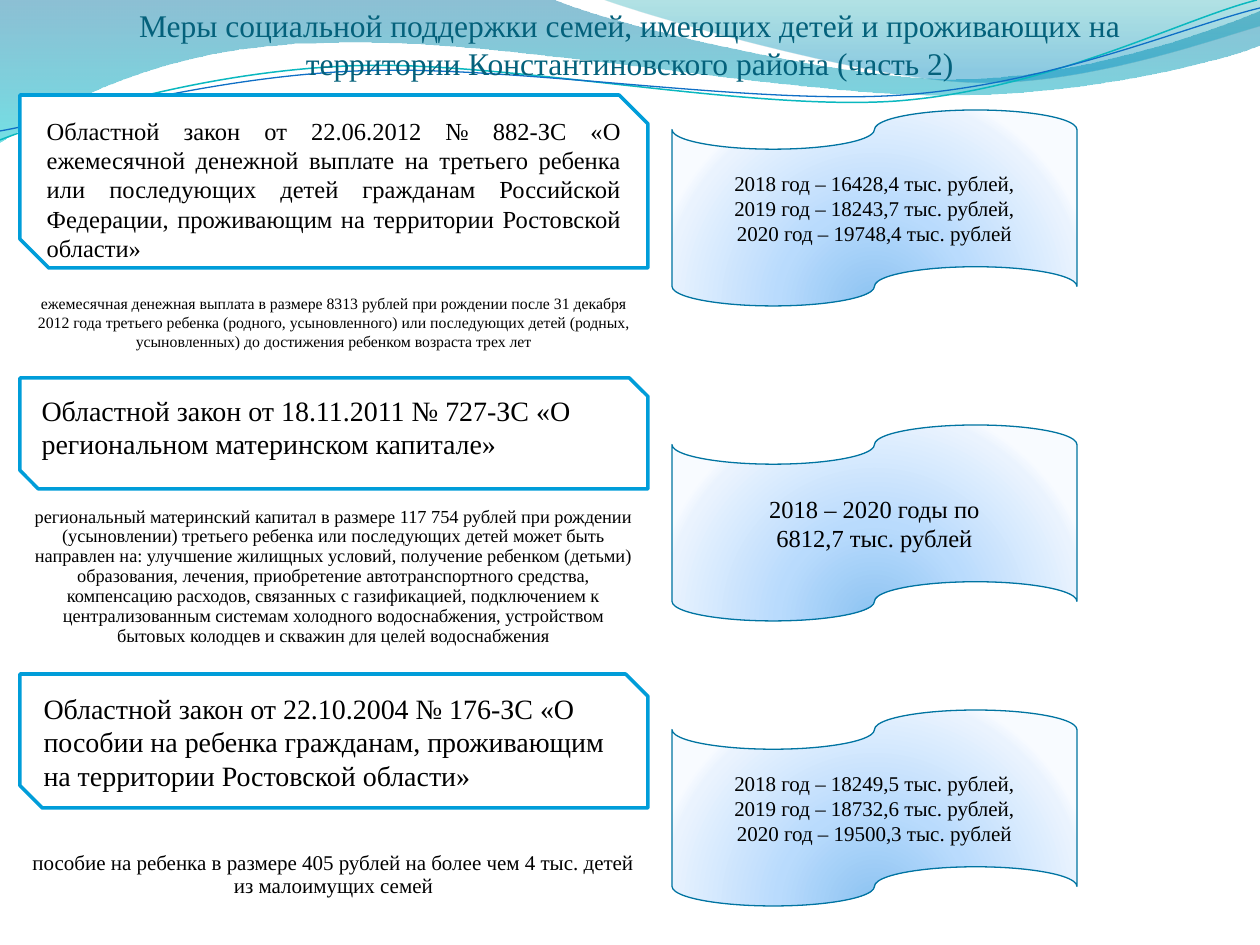
from pptx import Presentation
from pptx.dml.color import RGBColor
from pptx.enum.shapes import MSO_SHAPE
from pptx.enum.text import MSO_ANCHOR, PP_ALIGN
from pptx.oxml import parse_xml
from pptx.oxml.ns import nsdecls, qn
from pptx.util import Pt

PX = 914400 / 126  # EMU in one px
COLORS = {
    "title": "04617B", "text": "000000", "white": "FFFFFF",
    "law_line": "009DD9", "tape_line": "0074A1",
    "teal_wave": "0AB8BF", "blue_wave": "0F6FC6",
}
LINEAR = '<a:lin ang="5400000" scaled="1"/>'
RADIAL = ('<a:path path="circle"><a:fillToRect l="50000" t="130000" '
          'r="50000" b="-30000"/></a:path>')
TAPE_STOPS = [(0, "8BC2F1", 100), (43, "B9DBFD", 100),
              (93, "EAF3FE", 100), (100, "F8FBFF", 100)]

deck = Presentation()
deck.slide_width, deck.slide_height = round(1260 * PX), round(945 * PX)
page = deck.slides.add_slide(deck.slide_layouts[6])


def set_gradient(shape, stops, direction):
    """Give a shape gradient stops of (position, colour, opacity) in percent."""
    marks = "".join(
        f'<a:gs pos="{position * 1000}"><a:srgbClr val="{color}">'
        + (f'<a:alpha val="{opacity * 1000}"/>' if opacity < 100 else "")
        + '</a:srgbClr></a:gs>'
        for position, color, opacity in stops)
    shape._element.spPr.insert(2, parse_xml(
        f'<a:gradFill {nsdecls("a")} rotWithShape="1">'
        f'<a:gsLst>{marks}</a:gsLst>{direction}</a:gradFill>'))


def write_text(shape, lines, size, align, anchor, color="text", **spacing):
    frame = shape.text_frame
    frame.word_wrap = True
    frame.vertical_anchor = anchor
    for number, line in enumerate(lines):
        para = frame.paragraphs[0] if number == 0 else frame.add_paragraph()
        para.text = line
        for name, value in {"alignment": align, **spacing}.items():
            setattr(para, name, value)
        for span in para.runs:
            for name, value in {"name": "Times New Roman", "size": Pt(size)}.items():
                setattr(span.font, name, value)
            span.font.color.rgb = RGBColor.from_string(COLORS[color])


# Waves at the top: start point, then cubic curves (6 numbers) or lines (2)
waves = [
    {"start": (0, 0), "stops": [(0, "0074A1", 45), (100, "00C6CF", 55)],
     "parts": [(554, 0), (600, 21, 837, 79, 955, 79),
               (1074, 79, 1207, 33, 1260, 11), (1260, 45),
               (1239, 55, 1096, 96, 940, 95), (784, 95, 481, 35, 324, 43),
               (163, 45, 58, 105, 0, 142)]},
    {"start": (604, 0), "stops": [(0, "00A1A9", 30), (80, "008BBF", 45)],
     "parts": [(641, 14, 859, 78, 969, 82), (1079, 87, 1211, 40, 1260, 26),
               (1260, 0)]},
    {"start": (0, 140), "line": ("teal_wave", 0.85),
     "parts": [(60, 117, 199, 72, 349, 66), (498, 59, 747, 112, 898, 101),
               (1050, 89, 1182, 19, 1257, 0)]},
    {"start": (0, 131), "line": ("blue_wave", 0.75),
     "parts": [(59, 121, 207, 77, 357, 71), (508, 64, 752, 106, 903, 95),
               (1053, 84, 1186, 26, 1260, 8)]},
]
for wave in waves:
    builder = page.shapes.build_freeform(*wave["start"], scale=PX)
    for part in wave["parts"]:
        builder.add_line_segments(list(zip(part[::2], part[1::2])), close=False)
    if "stops" in wave:
        builder.add_line_segments([], close=True)
    shape = builder.convert_to_shape()
    # Join each three segments of a curve into one cubic segment
    segments = iter(list(shape._element.spPr.iter(qn("a:lnTo"))))
    for part in wave["parts"]:
        group = [next(segments) for _ in range(len(part) // 2)]
        if len(group) == 3:
            curve = parse_xml(f'<a:cubicBezTo {nsdecls("a")}/>')
            group[0].addprevious(curve)
            for segment in group:
                curve.append(segment[0])
                segment.getparent().remove(segment)
    shape.shadow.inherit = False
    if "stops" in wave:
        set_gradient(shape, wave["stops"], LINEAR)
        shape.line.fill.background()
    else:
        color, width = wave["line"]
        shape.fill.background()
        shape.line.color.rgb = RGBColor.from_string(COLORS[color])
        shape.line.width = Pt(width)

# Title
title = page.shapes.add_textbox(*(round(v * PX) for v in (87, 0, 1086, 94)))
write_text(title, ["Меры социальной поддержки семей, имеющих детей и проживающих на\v"
                   "территории Константиновского района (часть 2)"],
           18, PP_ALIGN.CENTER, MSO_ANCHOR.TOP, "title")

# Laws: top, height, size, alignment, text
laws = [
    (95, 173, 14, PP_ALIGN.JUSTIFY,
     "Областной закон от 22.06.2012 № 882-ЗС «О ежемесячной денежной выплате на третьего "
     "ребенка или последующих детей гражданам Российской Федерации, проживающим на "
     "территории Ростовской области»"),
    (378, 111, 16, PP_ALIGN.LEFT,
     "Областной закон от 18.11.2011 № 727-ЗС «О региональном материнском капитале»"),
    (674, 134, 16, PP_ALIGN.LEFT,
     "Областной закон от 22.10.2004 № 176-ЗС «О пособии на ребенка гражданам, "
     "проживающим на территории Ростовской области»"),
]
for top, height, size, align, text in laws:
    box = page.shapes.add_shape(MSO_SHAPE.SNIP_2_DIAG_RECTANGLE,
                                *(round(v * PX) for v in (20, top, 628, height)))
    box.shadow.inherit = False
    box.fill.solid()
    box.fill.fore_color.rgb = RGBColor.from_string(COLORS["white"])
    box.line.color.rgb = RGBColor.from_string(COLORS["law_line"])
    box.line.width = Pt(2)
    write_text(box, [text], size, align, MSO_ANCHOR.TOP)

# Explanations: top, height, size, anchor, line spacing, text
explanations = [
    (279, 86, 9, MSO_ANCHOR.MIDDLE, 1.0,
     "ежемесячная денежная выплата в размере 8313 рублей при рождении после 31 декабря "
     "2012 года третьего ребенка (родного, усыновленного) или последующих детей (родных, "
     "усыновленных) до достижения ребенком возраста трех лет"),
    (501, 150, 10.5, MSO_ANCHOR.TOP, 0.9,
     "региональный материнский капитал в размере 117 754 рублей при рождении (усыновлении) "
     "третьего ребенка или последующих детей может быть направлен на: улучшение жилищных "
     "условий, получение ребенком (детьми) образования, лечения, приобретение "
     "автотранспортного средства, компенсацию расходов, связанных с газификацией, "
     "подключением к централизованным системам холодного водоснабжения, устройством "
     "бытовых колодцев и скважин для целей водоснабжения"),
    (832, 86, 12, MSO_ANCHOR.MIDDLE, 0.9,
     "пособие на ребенка в размере 405 рублей на более чем 4 тыс. детей из малоимущих семей"),
]
for top, height, size, anchor, spacing, text in explanations:
    box = page.shapes.add_textbox(*(round(v * PX) for v in (19, top, 629, height)))
    write_text(box, [text], size, PP_ALIGN.CENTER, anchor, line_spacing=spacing)

# Amounts on punched tapes: top, size, lines
amounts = [
    (110, 12, ["2018 год – 16428,4 тыс. рублей,", "2019 год – 18243,7 тыс. рублей,",
               "2020 год – 19748,4 тыс. рублей"]),
    (425, 14, ["2018 – 2020 годы по", "6812,7 тыс. рублей"]),
    (710, 12, ["2018 год – 18249,5 тыс. рублей,", "2019 год – 18732,6 тыс. рублей,",
               "2020 год – 19500,3 тыс. рублей"]),
]
for top, size, lines in amounts:
    tape = page.shapes.add_shape(MSO_SHAPE.FLOWCHART_PUNCHED_TAPE,
                                 *(round(v * PX) for v in (672, top, 405, 196)))
    tape.shadow.inherit = False
    set_gradient(tape, TAPE_STOPS, RADIAL)
    tape.line.color.rgb = RGBColor.from_string(COLORS["tape_line"])
    tape.line.width = Pt(0.75)
    write_text(tape, lines, size, PP_ALIGN.CENTER, MSO_ANCHOR.MIDDLE)

deck.save("out.pptx")
